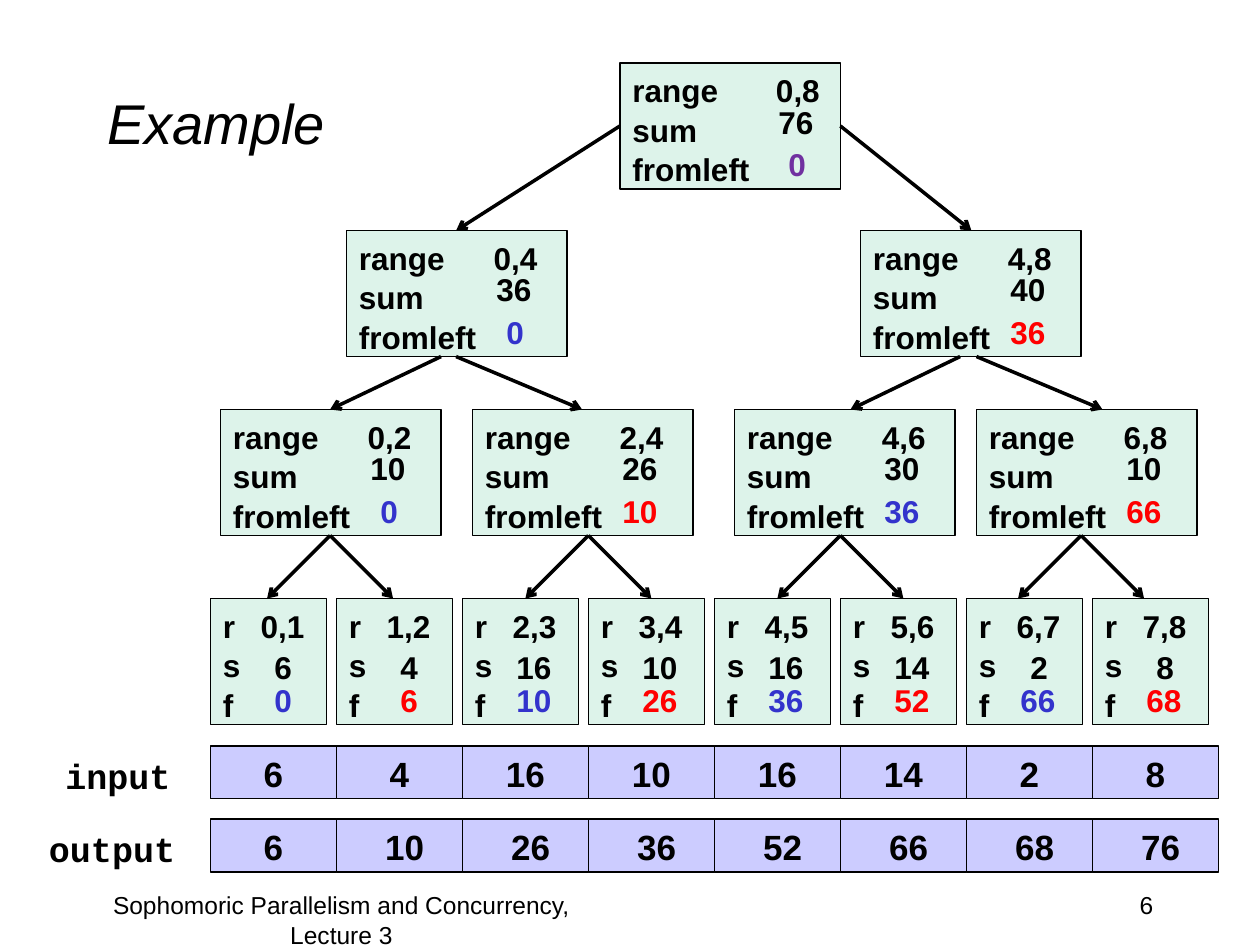
from lxml import etree
from pptx import Presentation
from pptx.dml.color import RGBColor
from pptx.enum import shapes, text
from pptx.oxml import ns
from pptx.util import Inches, Pt

BLACK = RGBColor(0x00, 0x00, 0x00)
BLUE = RGBColor(0x33, 0x33, 0xCC)
RED = RGBColor(0xFF, 0x00, 0x00)
PURPLE = RGBColor(0x70, 0x30, 0xA0)
MINT = RGBColor(0xDD, 0xF3, 0xEA)
LILAC = RGBColor(0xCC, 0xCC, 0xFF)

LEFT, STEP = 1.67, 1
WIDE, THIN, HIGH = 1.75, 0.92, 1
LEAF_Y = 4.75

NODES = [
    (4.92, 0.5, "0,8", 76, 0, PURPLE),
    (2.75, 1.83, "0,4", 36, 0, BLUE),
    (6.83, 1.83, "4,8", 40, 36, RED),
    (1.75, 3.25, "0,2", 10, 0, BLUE),
    (3.75, 3.25, "2,4", 26, 10, RED),
    (5.83, 3.25, "4,6", 30, 36, BLUE),
    (7.75, 3.25, "6,8", 10, 66, RED),
]
LINKS = [
    (4.92, 1, 3.62, 1.83), (6.67, 1, 7.71, 1.83),
    (3.5, 2.83, 2.62, 3.25), (3.62, 2.83, 4.62, 3.25),
    (7.62, 2.83, 6.75, 3.25), (7.75, 2.83, 8.75, 3.25),
]
FORKS = [2.62, 4.67, 6.67, 8.58]
INPUT = [6, 4, 16, 10, 16, 14, 2, 8]
OUTPUT = [6, 10, 26, 36, 52, 66, 68, 76]


def style(frame, size, color=BLACK, bold=True, face="Arial", align=text.PP_ALIGN.LEFT):
    """Format every paragraph and run of a text frame."""
    for para in frame.paragraphs:
        para.alignment = align
        para.line_spacing = 1.05
        for run in para.runs:
            font = run.font
            font.name, font.size, font.bold = face, Pt(size), bold
            font.color.rgb = color


def label(slide, box, words, size, wrap=False, **looks):
    """Add a text box."""
    frame = slide.shapes.add_textbox(*map(Inches, box)).text_frame
    frame.word_wrap = wrap
    frame.text = words
    style(frame, size, **looks)


def block(slide, box, fill, words):
    """Add a thin-edged rectangle and return its text frame."""
    shape = slide.shapes.add_shape(shapes.MSO_SHAPE.RECTANGLE, *map(Inches, box))
    shape.shadow.inherit = False
    shape.fill.solid()
    shape.fill.fore_color.rgb = fill
    shape.line.color.rgb = BLACK
    shape.line.width = Pt(0.75)
    shape.text_frame.text = words
    return shape.text_frame


def node(slide, box, names, span, tab):
    """Draw a tree node with its range set at a tab stop."""
    first, *rest = names
    frame = block(slide, box, MINT, "\n".join([f"{first}\t{span}", *rest]))
    frame.vertical_anchor = text.MSO_ANCHOR.TOP
    style(frame, 18)
    props = frame.paragraphs[0]._p.get_or_add_pPr()
    stops = etree.SubElement(props, ns.qn("a:tabLst"))
    etree.SubElement(stops, ns.qn("a:tab"), pos=str(Inches(tab)), algn="l")


def value(slide, x, y, num, color=BLACK):
    """Place a number, shifting single digits to stay centred."""
    one = num < 10
    box = (x + 0.08 * one, y, 0.34 if one else 0.48, 0.4)
    label(slide, box, str(num), 18, color=color)


def arrow(slide, ends):
    """Draw a line with an open arrowhead at its end."""
    link = slide.shapes.add_connector(shapes.MSO_CONNECTOR.STRAIGHT, *map(Inches, ends))
    link.line.color.rgb = BLACK
    link.line.width = Pt(2)
    etree.SubElement(link.line._get_or_add_ln(), ns.qn("a:tailEnd"), type="arrow")
    etree.SubElement(link._element.spPr, ns.qn("a:effectLst"))


def array(slide, box, nums, nudge=0):
    """Draw a row of number cells, nudging two-digit sums right."""
    x, y, wide, high = box
    for i, num in enumerate(nums):
        frame = block(slide, (x + i * wide, y, wide, high), LILAC, str(num))
        frame.vertical_anchor = text.MSO_ANCHOR.MIDDLE
        frame.word_wrap = False
        if num >= 10:
            frame.margin_left = Inches(0.1 + nudge)
        style(frame, 20, align=text.PP_ALIGN.CENTER)


def tree(slide):
    """Draw the nodes, their values and the arrows between them."""
    for x, y, span, total, prior, color in NODES:
        push = 0.07 if span == "0,8" else 0
        node(slide, (x, y, WIDE, HIGH), ("range", "sum", "fromleft"), span, 1.07 + push)
        value(slide, x + 1.09 + push, y + 0.25, total)
        value(slide, x + 1.09 + push, y + 0.59, prior, color)
    for i, (total, prior) in enumerate(zip(INPUT, [0] + OUTPUT)):
        x = LEFT + i * STEP
        node(slide, (x, LEAF_Y, THIN, HIGH), "rsf", f"{i},{i + 1}", 0.3)
        value(slide, x + 0.33, LEAF_Y + 0.33, total)
        value(slide, x + 0.33, LEAF_Y + 0.59, prior, RED if i % 2 else BLUE)
    for ends in LINKS:
        arrow(slide, ends)
    for x in FORKS:
        for side in (-0.5, 0.5):
            arrow(slide, (x, 4.25, x + side, LEAF_Y))


def heading(slide, box):
    """Set the title placeholder."""
    title = slide.shapes.title
    title.left, title.top, title.width, title.height = map(Inches, box)
    frame = title.text_frame
    frame.text = "Example"
    frame.vertical_anchor = text.MSO_ANCHOR.MIDDLE
    style(frame, 32, bold=False)
    frame.paragraphs[0].runs[0].font.italic = True


def footer(slide, y):
    """Add the lecture name and the page number."""
    label(slide, (0.5, y, 4.42, 0.5), "Sophomoric Parallelism and Concurrency, Lecture 3",
          14, wrap=True, bold=False, align=text.PP_ALIGN.CENTER)
    label(slide, (7.17, y, 2.08, 0.5), "6", 14, wrap=True, bold=False,
          align=text.PP_ALIGN.RIGHT)


def main():
    """Build and save the slide."""
    deck = Presentation()
    deck.slide_width, deck.slide_height = Inches(10), Inches(7.5)
    slide = deck.slides.add_slide(deck.slide_layouts[5])
    heading(slide, (0.75, 0.33, 8.5, 1.25))
    tree(slide)
    label(slide, (0.42, 5.92, 1.04, 0.44), "input", 20, face="Courier New")
    array(slide, (LEFT, 5.92, STEP, 0.42), INPUT)
    label(slide, (0.29, 6.5, 1.21, 0.44), "output", 20, face="Courier New")
    array(slide, (LEFT, 6.5, STEP, 0.42), OUTPUT, nudge=0.08)
    footer(slide, 7)
    deck.save("out.pptx")


if __name__ == "__main__":
    main()
